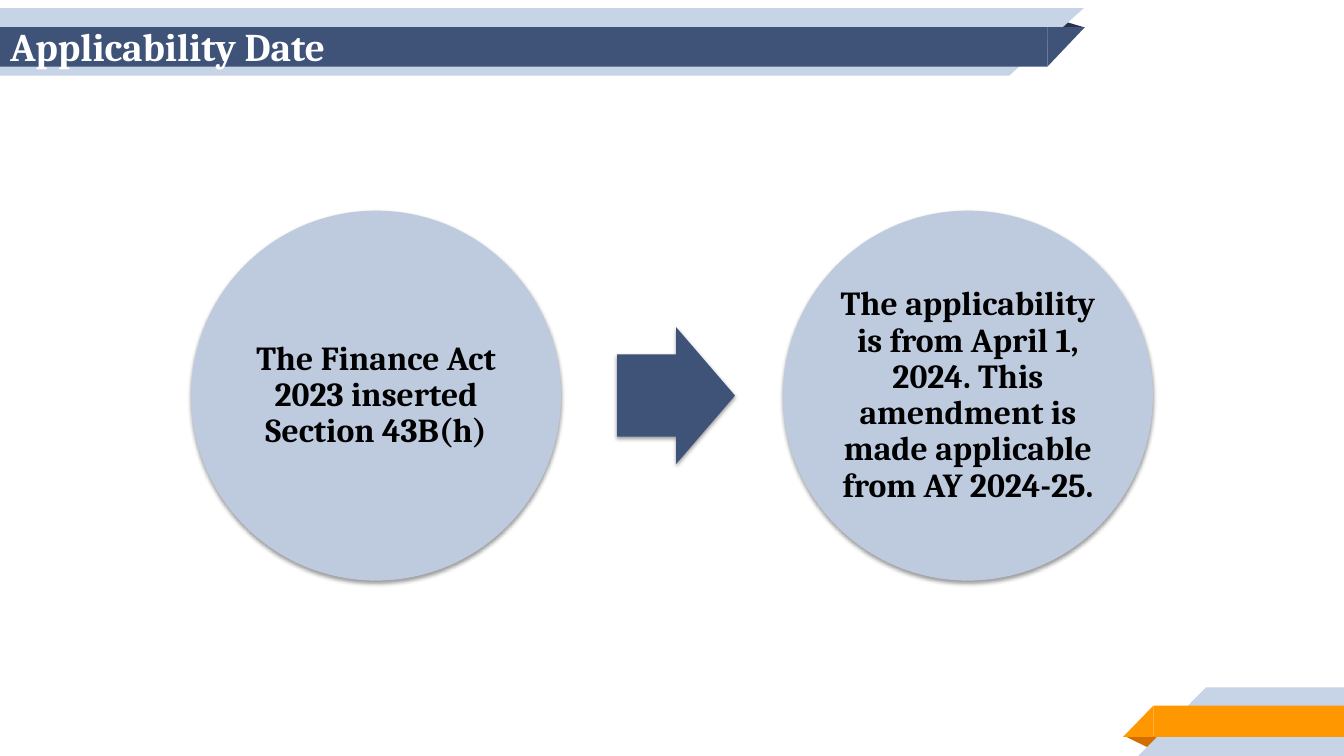
from lxml.etree import SubElement
from pptx import Presentation
from pptx.dml.color import RGBColor
from pptx.enum.shapes import MSO_SHAPE
from pptx.enum.text import MSO_ANCHOR, MSO_AUTO_SIZE, PP_ALIGN
from pptx.oxml.ns import qn
from pptx.util import Inches, Pt

TITLE = "Applicability Date"
STEPS = [
    "The Finance Act 2023 inserted Section 43B(h)",
    "The applicability is from April 1, 2024. "
    "This amendment is made applicable from AY 2024-25.",
]
COLORS = {
    "pale": "C7D3E6", "navy": "3F5378", "navy_fold": "263248",
    "orange": "FF9800", "orange_fold": "D26F00",
    "circle": "BECBDE", "black": "000000", "white": "FFFFFF",
}
FONT = {"name": "Cambria", "bold": True}
SLIDE_W, SLIDE_H = 13.33, 7.5
FOLD = 0.324
TOP_BANDS = [
    {"body": 10.01, "tip": 0.74, "y": 0.08, "h": 0.67, "color": "pale"},
    {"body": 10.39, "tip": 0.37, "y": 0.27, "h": 0.39, "color": "navy"},
]
BOTTOM_BANDS = [
    {"body": 1.37, "tip": 0.67, "y": 6.82, "h": 0.68, "color": "pale"},
    {"body": 1.89, "tip": 0.3, "y": 7.0, "h": 0.31, "color": "orange"},
]
CIRCLE, PITCH, CIRCLE_Y = 3.67, 5.87, 2.09
ARROW_W, ARROW_H = 1.17, 1.36
INSET = 0.03

prs = Presentation()
prs.slide_width, prs.slide_height = Inches(SLIDE_W), Inches(SLIDE_H)
s = prs.slides.add_slide(prs.slide_layouts[5])


def add_shape(kind, x, y, w, h, color, rotation=0, flip=False):
    sp = s.shapes.add_shape(kind, Inches(x), Inches(y), Inches(w), Inches(h))
    sp.fill.solid()
    sp.fill.fore_color.rgb = RGBColor.from_string(COLORS[color])
    sp.line.fill.background()
    sp.shadow.inherit = False
    sp.rotation = rotation
    if flip:
        sp._element.spPr.find(qn("a:xfrm")).set("flipH", "1")
    return sp


def add_fold(x, y, w, h, color, rotation=0):
    sp = add_shape(MSO_SHAPE.ISOSCELES_TRIANGLE, x, y, w, h, color, rotation)
    sp.adjustments[0] = FOLD


def add_band(body, tip, y, h, color, top):
    body_x = 0 if top else SLIDE_W - body
    tip_x = body if top else body_x - tip
    rotation = 180 if top else 0
    add_shape(MSO_SHAPE.RECTANGLE, body_x, y, body, h, color)
    add_shape(MSO_SHAPE.RIGHT_TRIANGLE, tip_x, y, tip, h, color, rotation, True)


def add_shadow(sp):
    effects = sp._element.spPr.find(qn("a:effectLst"))
    shadow = SubElement(effects, qn("a:outerShdw"), {
        "blurRad": str(Pt(3.1)), "dist": str(Pt(1.6)),
        "dir": "5400000", "rotWithShape": "0"})
    color = SubElement(shadow, qn("a:srgbClr"), val=COLORS["black"])
    SubElement(color, qn("a:alpha"), val="38000")


def write(sp, text, size, color, align, inset):
    tf = sp.text_frame
    frame = {"word_wrap": True, "auto_size": MSO_AUTO_SIZE.NONE,
             "vertical_anchor": MSO_ANCHOR.MIDDLE}
    for side in ("left", "right", "top", "bottom"):
        frame["margin_" + side] = Inches(inset)
    for key, value in frame.items():
        setattr(tf, key, value)
    p = tf.paragraphs[0]
    p.alignment = align
    r = p.add_run()
    r.text = text
    for key, value in {**FONT, "size": Pt(size)}.items():
        setattr(r.font, key, value)
    r.font.color.rgb = RGBColor.from_string(COLORS[color])
    return p


add_fold(10.01, 0.12, 0.74, 0.15, "navy_fold")
for band in TOP_BANDS:
    add_band(**band, top=True)
add_fold(11.15, 7.3, 0.39, 0.13, "orange_fold", 180)
for band in BOTTOM_BANDS:
    add_band(**band, top=False)

title = s.shapes.title
s.shapes._spTree.append(title._element)
title.left, title.top = Inches(0), Inches(0.13)
title.width, title.height = Inches(10.76), Inches(0.65)
write(title, TITLE, 28, "white", PP_ALIGN.LEFT, 0.1)

first_x = (SLIDE_W - PITCH * (len(STEPS) - 1) - CIRCLE) / 2
for i, text in enumerate(STEPS):
    x = first_x + i * PITCH
    if i:
        arrow_x = x - (PITCH - CIRCLE + ARROW_W) / 2 + 0.04
        arrow_y = CIRCLE_Y + (CIRCLE - ARROW_H) / 2
        arrow = add_shape(MSO_SHAPE.RIGHT_ARROW, arrow_x, arrow_y,
                          ARROW_W, ARROW_H, "navy")
        arrow.adjustments[0] = 0.6
        arrow.adjustments[1] = 0.5
        add_shadow(arrow)
    circle = add_shape(MSO_SHAPE.OVAL, x, CIRCLE_Y, CIRCLE, CIRCLE, "circle")
    add_shadow(circle)
    p = write(circle, text, 24, "black", PP_ALIGN.CENTER, INSET)
    p.line_spacing = 0.9

prs.save("out.pptx")
